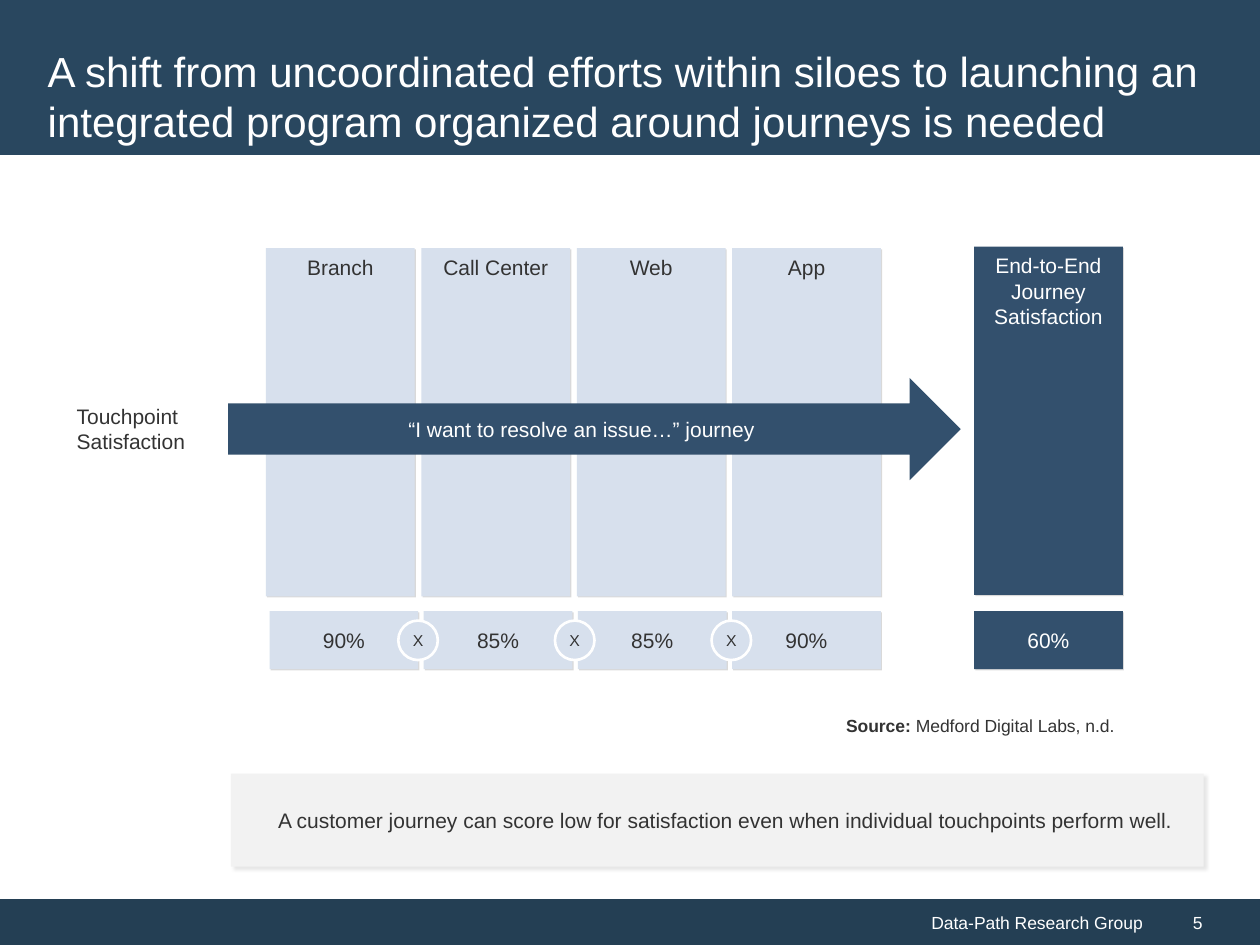
import pptx
import pptx.dml.color
import pptx.enum.shapes
import pptx.enum.text
import pptx.oxml
import pptx.oxml.ns
import pptx.util

Pt = pptx.util.Pt
RGBColor = pptx.dml.color.RGBColor
Shape = pptx.enum.shapes.MSO_SHAPE
Align = pptx.enum.text.PP_ALIGN
Anchor = pptx.enum.text.MSO_ANCHOR

WHITE = RGBColor(0xFF, 0xFF, 0xFF)
TEXT = RGBColor(0x33, 0x33, 0x33)
HEADER = RGBColor(0x29, 0x47, 0x5F)
FOOTER = RGBColor(0x24, 0x3F, 0x54)
NAVY = RGBColor(0x33, 0x50, 0x6D)
PALE = RGBColor(0xD7, 0xE0, 0xED)
GREY = RGBColor(0xF2, 0xF2, 0xF2)

TITLE = ("A shift from uncoordinated efforts within siloes to launching an "
         "integrated program organized around journeys is needed")
TOUCHPOINTS = [("Branch", "90%"), ("Call Center", "85%"), ("Web", "85%"), ("App", "90%")]
JOURNEY = "“I want to resolve an issue…” journey"
OUTCOME = ("End-to-End Journey Satisfaction", "60%")
ROW_LABEL = "Touchpoint Satisfaction"
SOURCE = [("Source: ", True), ("Medford Digital Labs, n.d.", False)]
TAKEAWAY = "A customer journey can score low for satisfaction even when individual touchpoints perform well."
ORGANIZATION, PAGE = "Data-Path Research Group", "5"

# Places in points
SLIDE_WIDTH, SLIDE_HEIGHT = 720, 540
FOOTER_TOP, FOOTER_HEIGHT, PAGE_LEFT = 513.8, 26.6, 660
BLOCK_WIDTH, COLUMN_HEIGHT, SCORE_HEIGHT = 85, 199, 33.2
COLUMN_LEFT, COLUMN_PITCH, COLUMN_TOP = 152, 88.8, 141.8
SCORE_LEFT, SCORE_PITCH, SCORE_TOP = 154, 88.1, 349.2
BADGE_LEFT, BADGE_PITCH, BADGE_TOP, BADGE_SIZE = 227.6, 89.5, 354.6, 22.6
OUTCOME_LEFT, OUTCOME_TOP = 556.6, 141

# Opacity in percent, then blur and distance in points
BLOCK_SHADOW = (14, 0, 1)
CALLOUT_SHADOW = (10, 2, 2)

CENTER = {"alignment": Align.CENTER}
MIDDLE = {"vertical_anchor": Anchor.MIDDLE}


def write(shape, runs, size=12, color=TEXT, frame_format=None, paragraph_format=None):
    """Fill the shape with one paragraph of (text, bold) runs, or one plain string."""
    frame = shape.text_frame
    frame_values = {"word_wrap": True, "vertical_anchor": Anchor.TOP, **(frame_format or {})}
    for name, value in frame_values.items():
        setattr(frame, name, value)
    paragraph = frame.paragraphs[0]
    for name, value in {"alignment": Align.LEFT, **(paragraph_format or {})}.items():
        setattr(paragraph, name, value)
    for text, bold in [(runs, False)] if isinstance(runs, str) else runs:
        run = paragraph.add_run()
        run.text = text
        for name, value in {"name": "Arial", "size": Pt(size), "bold": bold}.items():
            setattr(run.font, name, value)
        run.font.color.rgb = color


def add_text(slide, place, runs, **style):
    write(slide.shapes.add_textbox(*map(Pt, place)), runs, **style)


def cast_shadow(shape, opacity, blur, distance):
    effects = shape._element.spPr.find(pptx.oxml.ns.qn("a:effectLst"))
    effects.append(pptx.oxml.parse_xml(
        f'<a:outerShdw {pptx.oxml.ns.nsdecls("a")} blurRad="{Pt(blur)}" dist="{Pt(distance)}" '
        f'dir="2700000" algn="tl" rotWithShape="0"><a:srgbClr val="000000">'
        f'<a:alpha val="{opacity * 1000}"/></a:srgbClr></a:outerShdw>'))


def add_block(slide, place, fill, runs="", kind=Shape.RECTANGLE, outline=None, shadow=None, **style):
    shape = slide.shapes.add_shape(kind, *map(Pt, place))
    shape.shadow.inherit = False
    shape.fill.solid()
    shape.fill.fore_color.rgb = fill
    if outline:
        shape.line.color.rgb = outline
        shape.line.width = Pt(1.5)
    else:
        shape.line.fill.background()
    if shadow:
        cast_shadow(shape, *shadow)
    if runs:
        write(shape, runs, **style)


def add_bands(slide):
    """Header with the title, and footer with the page number."""
    add_block(slide, (0, FOOTER_TOP, PAGE_LEFT, FOOTER_HEIGHT), FOOTER, ORGANIZATION,
              size=10, color=WHITE, frame_format=MIDDLE,
              paragraph_format={"alignment": Align.RIGHT})
    add_block(slide, (PAGE_LEFT, FOOTER_TOP, SLIDE_WIDTH - PAGE_LEFT, FOOTER_HEIGHT), FOOTER, PAGE,
              size=10, color=WHITE, frame_format={**MIDDLE, "margin_left": Pt(21.6)})
    add_block(slide, (0, 0, SLIDE_WIDTH, 88.6), HEADER)
    add_text(slide, (20.2, 20.2, 679, 69), TITLE, size=24, color=WHITE, frame_format=MIDDLE)


def add_journey(slide):
    block = {"shadow": BLOCK_SHADOW, "paragraph_format": CENTER}
    for index, (name, _) in enumerate(TOUCHPOINTS):
        left = COLUMN_LEFT + index * COLUMN_PITCH
        add_block(slide, (left, COLUMN_TOP, BLOCK_WIDTH, COLUMN_HEIGHT), PALE, name, **block)
    add_block(slide, (130.4, 216, 418.6, 58.4), NAVY, JOURNEY, kind=Shape.RIGHT_ARROW,
              color=WHITE, frame_format=MIDDLE, paragraph_format=CENTER)
    for index, (_, score) in enumerate(TOUCHPOINTS):
        left = SCORE_LEFT + index * SCORE_PITCH
        add_block(slide, (left, SCORE_TOP, BLOCK_WIDTH, SCORE_HEIGHT), PALE, score,
                  frame_format=MIDDLE, **block)
    name, score = OUTCOME
    add_block(slide, (OUTCOME_LEFT, OUTCOME_TOP, BLOCK_WIDTH, COLUMN_HEIGHT), NAVY, name,
              color=WHITE, **block)
    add_block(slide, (OUTCOME_LEFT, SCORE_TOP, BLOCK_WIDTH, SCORE_HEIGHT), NAVY, score,
              color=WHITE, frame_format=MIDDLE, **block)
    no_margins = {f"margin_{side}": 0 for side in ("left", "top", "right", "bottom")}
    for index in range(len(TOUCHPOINTS) - 1):
        left = BADGE_LEFT + index * BADGE_PITCH
        add_block(slide, (left, BADGE_TOP, BADGE_SIZE, BADGE_SIZE), PALE, "X",
                  kind=Shape.OVAL, outline=WHITE, size=9, frame_format={**MIDDLE, **no_margins},
                  paragraph_format={**CENTER, "space_after": Pt(6)})


def add_notes_around_journey(slide):
    add_text(slide, (36.7, 226.8, 80.6, 36), ROW_LABEL)
    add_text(slide, (476.4, 404.8, 174.6, 19.4), SOURCE, size=10)
    add_block(slide, (131.9, 442, 556, 53.2), GREY, TAKEAWAY, shadow=CALLOUT_SHADOW,
              frame_format={**MIDDLE, "margin_left": Pt(27)})


def main():
    presentation = pptx.Presentation()
    presentation.slide_width, presentation.slide_height = Pt(SLIDE_WIDTH), Pt(SLIDE_HEIGHT)
    slide = presentation.slides.add_slide(presentation.slide_layouts[6])
    add_bands(slide)
    add_journey(slide)
    add_notes_around_journey(slide)
    presentation.save("out.pptx")


if __name__ == "__main__":
    main()
